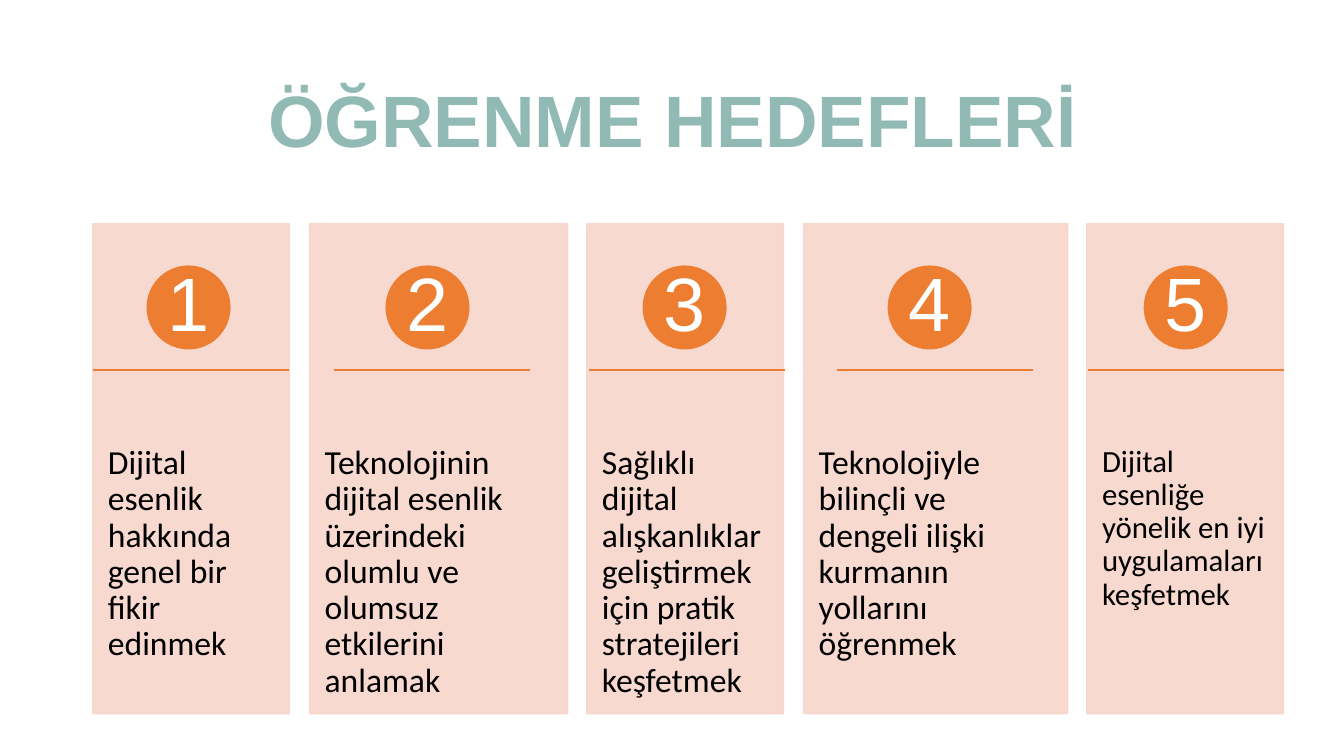
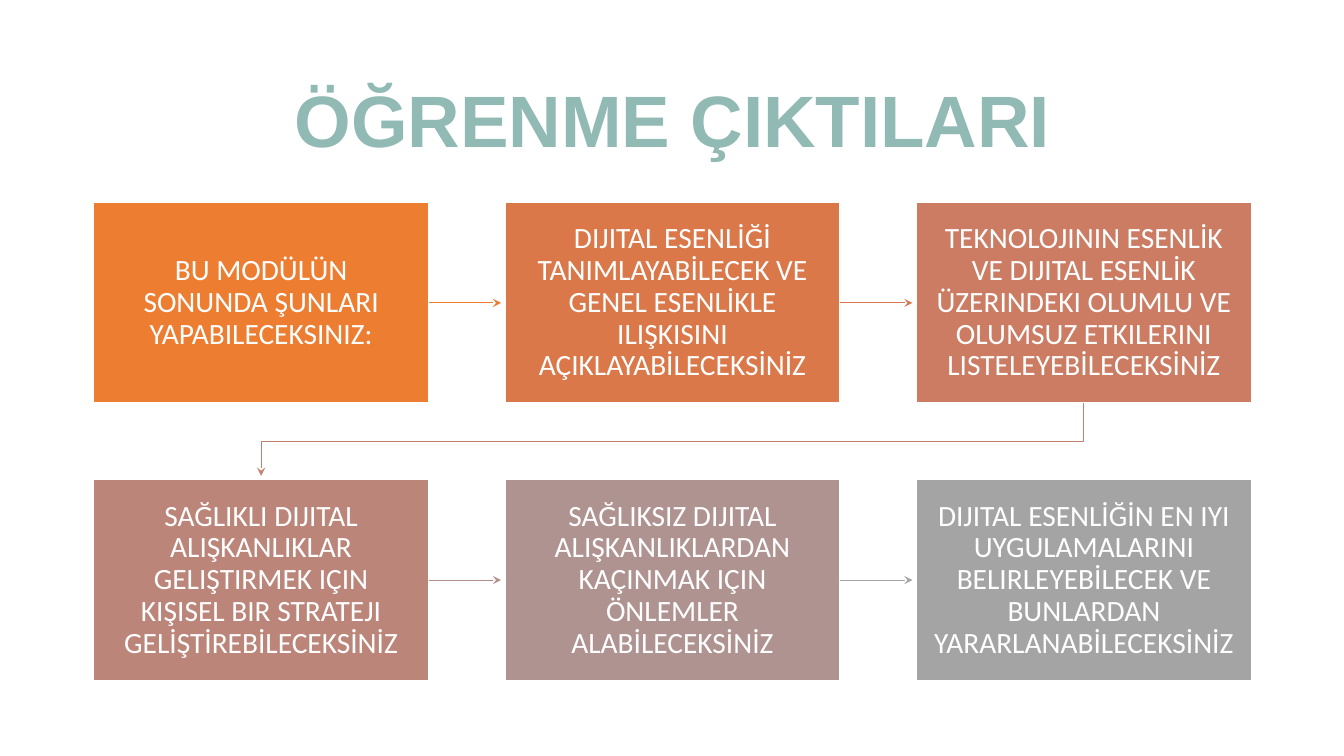
import pptx
import pptx.dml.color
import pptx.enum.shapes
import pptx.enum.text
import pptx.oxml.ns
import pptx.util
from lxml import etree

Inches = pptx.util.Inches
Pt = pptx.util.Pt
qn = pptx.oxml.ns.qn
Preset = pptx.enum.shapes.MSO_SHAPE
Straight = pptx.enum.shapes.MSO_CONNECTOR.STRAIGHT
Anchor = pptx.enum.text.MSO_ANCHOR
Align = pptx.enum.text.PP_ALIGN

# Shared look
TITLE_COLOR = "92BAB5"
ACCENT = "ED7D31"
CARD = "F7D5CB"
WHITE = "FFFFFF"
BLACK = "000000"


def paint(target, color):
    """Colour a font, or make a fill solid in that colour."""
    if hasattr(target, "solid"):
        target.solid()
        target.fore_color.rgb = pptx.dml.color.RGBColor.from_string(color)
    else:
        target.color.rgb = pptx.dml.color.RGBColor.from_string(color)


def write(shape, text, font, size, color, align=Align.CENTER,
          anchor=Anchor.MIDDLE, margins=(0.1, 0.05, 0.1, 0.05), bold=False):
    """Put one formatted paragraph into a shape."""
    frame = shape.text_frame
    frame.word_wrap = True
    frame.vertical_anchor = anchor
    (frame.margin_left, frame.margin_top,
     frame.margin_right, frame.margin_bottom) = map(Inches, margins)
    para = frame.paragraphs[0]
    para.text = text
    para.alignment = align
    para.line_spacing = 0.9
    para.font.name = font
    para.font.size = Pt(size)
    para.font.bold = bold
    paint(para.font, color)


deck = pptx.Presentation()
deck.slide_width = Inches(13.33)
deck.slide_height = Inches(7.5)

# Both pages with their titles
pages = []
for title in ("ÖĞRENME HEDEFLERİ", "ÖĞRENME ÇIKTILARI"):
    page = deck.slides.add_slide(deck.slide_layouts[6])
    box = page.shapes.add_textbox(Inches(0.92), Inches(0.61), Inches(11.5), Inches(1.24))
    write(box, title, "Arial", 52, TITLE_COLOR, bold=True)
    pages.append(page)
goals_page, outcomes_page = pages

# Goals: card left, card width, circle left, rule left, text size, text
goals = [
    (0.92, 1.95, 1.46, 0.92, 24, "Dijital esenlik hakkında genel bir fikir edinmek"),
    (3.07, 2.56, 3.83, 3.31, 24,
     "Teknolojinin dijital esenlik üzerindeki olumlu ve olumsuz etkilerini anlamak"),
    (5.82, 1.95, 6.38, 5.84, 24,
     "Sağlıklı dijital alışkanlıklar geliştirmek için pratik stratejileri keşfetmek"),
    (7.97, 2.62, 8.81, 8.3, 24,
     "Teknolojiyle bilinçli ve dengeli ilişki kurmanın yollarını öğrenmek"),
    (10.78, 1.95, 11.35, 10.79, 22,
     "Dijital esenliğe yönelik en iyi uygulamaları keşfetmek"),
]
for number, (left, width, circle_left, rule_left, size, text) in enumerate(goals, 1):
    card = goals_page.shapes.add_shape(
        Preset.RECTANGLE, Inches(left), Inches(2.22), Inches(width), Inches(4.86))
    card.shadow.inherit = False
    paint(card.fill, CARD)
    paint(card.line.fill, CARD)
    card.line.width = Pt(1)
    for tint in card._element.spPr.iter(qn("a:srgbClr")):
        etree.SubElement(tint, qn("a:alpha"), val="90000")
    write(card, text, "Calibri", size, BLACK, Align.LEFT, Anchor.TOP,
          (0.15, 2.2, 0.15, 0.05))

    circle = goals_page.shapes.add_shape(
        Preset.OVAL, Inches(circle_left), Inches(2.64), Inches(0.82), Inches(0.82))
    circle.shadow.inherit = False
    paint(circle.fill, ACCENT)
    paint(circle.line.fill, ACCENT)
    circle.line.width = Pt(1)
    write(circle, str(number), "Arial", 54, WHITE, margins=(0, 0, 0, 0))

    rule = goals_page.shapes.add_connector(
        Straight, Inches(rule_left), Inches(3.67), Inches(rule_left + 1.95), Inches(3.67))
    paint(rule.line.fill, ACCENT)
    rule.line.width = Pt(1)
    etree.SubElement(rule._element.spPr, qn("a:effectLst"))

# Outcomes: box colour, colour of the arrow to the next box, text
outcomes = [
    (ACCENT, ACCENT, "BU MODÜLÜN SONUNDA ŞUNLARI YAPABILECEKSINIZ:"),
    ("DB784A", "D77850", "DIJITAL ESENLİĞİ TANIMLAYABİLECEK VE GENEL ESENLİKLE "
     "ILIŞKISINI AÇIKLAYABİLECEKSİNİZ"),
    ("CB7C63", "C47F6E", "TEKNOLOJININ ESENLİK VE DIJITAL ESENLİK ÜZERINDEKI OLUMLU VE "
     "OLUMSUZ ETKILERINI LISTELEYEBİLECEKSİNİZ"),
    ("BC857A", "B38E8A", "SAĞLIKLI DIJITAL ALIŞKANLIKLAR GELIŞTIRMEK IÇIN KIŞISEL BIR "
     "STRATEJI GELİŞTİREBİLECEKSİNİZ"),
    ("AF9390", "A4A4A4", "SAĞLIKSIZ DIJITAL ALIŞKANLIKLARDAN KAÇINMAK IÇIN ÖNLEMLER "
     "ALABİLECEKSİNİZ"),
    ("A4A4A4", None, "DIJITAL ESENLİĞİN EN IYI UYGULAMALARINI BELIRLEYEBİLECEK VE "
     "BUNLARDAN YARARLANABİLECEKSİNİZ"),
]
COLUMNS = 3
BOX_LEFT, BOX_TOP = 0.93, 2.01
BOX_WIDTH, BOX_HEIGHT = 3.32, 1.99
COLUMN_STEP, ROW_STEP = 4.08, 2.75
ARROW_GAP = 0.04

for index, (color, arrow_color, text) in enumerate(outcomes):
    row, column = divmod(index, COLUMNS)
    left = BOX_LEFT + column * COLUMN_STEP
    top = BOX_TOP + row * ROW_STEP
    box = outcomes_page.shapes.add_shape(
        Preset.RECTANGLE, Inches(left), Inches(top), Inches(BOX_WIDTH), Inches(BOX_HEIGHT))
    box.shadow.inherit = False
    paint(box.fill, color)
    paint(box.line.fill, WHITE)
    box.line.width = Pt(1)
    write(box, text, "Calibri", 21, WHITE, margins=(0.16, 0.17, 0.16, 0.17))
    if arrow_color is None:
        continue

    if column < COLUMNS - 1:
        # Straight arrow to the box on the right
        middle = Inches(top + BOX_HEIGHT / 2)
        arrow = outcomes_page.shapes.add_connector(
            Straight, Inches(left + BOX_WIDTH), middle,
            Inches(left + COLUMN_STEP - ARROW_GAP), middle)
        arrow.begin_connect(box, 3)
        etree.SubElement(arrow._element.spPr, qn("a:effectLst"))
    else:
        # Bent arrow down to the start of the next row
        start_x = Inches(left + BOX_WIDTH / 2)
        end_x = Inches(BOX_LEFT + BOX_WIDTH / 2)
        bottom = top + BOX_HEIGHT
        bend_y = Inches(bottom + 0.38)
        outline = outcomes_page.shapes.build_freeform(start_x, Inches(bottom))
        outline.add_line_segments(
            [(start_x, bend_y), (end_x, bend_y),
             (end_x, Inches(top + ROW_STEP - ARROW_GAP))], close=False)
        arrow = outline.convert_to_shape()
        arrow.fill.background()
        arrow.shadow.inherit = False
    paint(arrow.line.fill, arrow_color)
    arrow.line.width = Pt(0.75)
    etree.SubElement(arrow.line._get_or_add_ln(), qn("a:tailEnd"), type="stealth")

deck.save("out.pptx")
